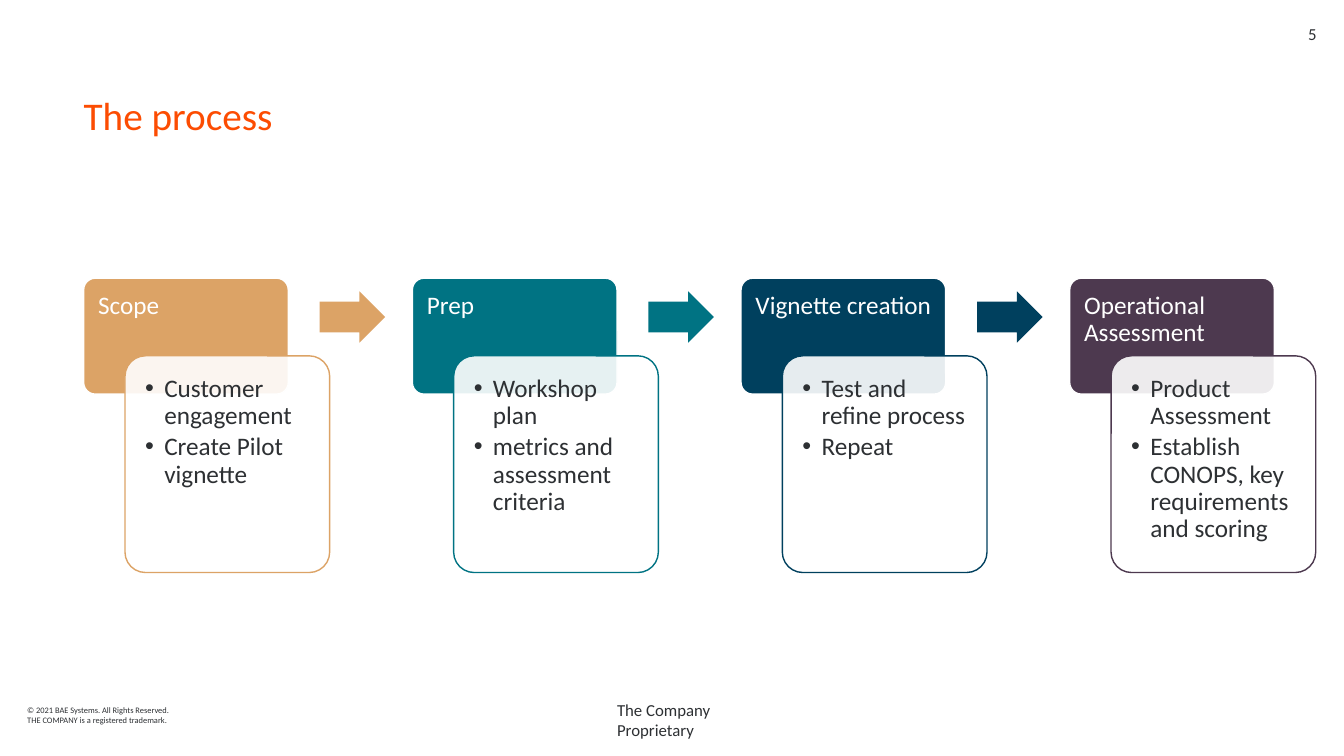
import lxml.etree
import pptx
import pptx.dml.color
import pptx.enum.shapes
import pptx.enum.text
import pptx.oxml.ns
import pptx.util

Inches = pptx.util.Inches
Pt = pptx.util.Pt
Shapes = pptx.enum.shapes.MSO_SHAPE
Anchor = pptx.enum.text.MSO_ANCHOR
Align = pptx.enum.text.PP_ALIGN

INK = "2D3033"
WHITE = "FFFFFF"
STEPS = [
    ("Scope", "DCA366", ["Customer engagement", "Create Pilot vignette"]),
    ("Prep", "007383", ["Workshop plan", "metrics and assessment criteria"]),
    ("Vignette creation", "00405E", ["Test and refine process", "Repeat"]),
    ("Operational Assessment", "4D394F",
     ["Product Assessment", "Establish CONOPS, key requirements and scoring"]),
]
STEP_PITCH = 3.26


def color(hex_string):
    """Turn a hex string into a colour."""
    return pptx.dml.color.RGBColor.from_string(hex_string)


def add_xml(parent, tag, **attributes):
    """Append a DrawingML element to a parent."""
    element = lxml.etree.SubElement(parent, pptx.oxml.ns.qn(tag))
    for name, value in attributes.items():
        element.set(name, value)
    return element


def setup_frame(frame, insets=(0, 0, 0, 0), anchor=Anchor.TOP):
    """Set wrapping, insets and anchor of a text frame."""
    frame.word_wrap = True
    frame.auto_size = pptx.enum.text.MSO_AUTO_SIZE.NONE
    frame.vertical_anchor = anchor
    (frame.margin_left, frame.margin_top,
     frame.margin_right, frame.margin_bottom) = map(Inches, insets)


def write(frame, texts, size, ink=INK, align=Align.LEFT, spacing=None, after=0, bullet=False):
    """Write one paragraph per text."""
    for index, text in enumerate(texts):
        paragraph = frame.paragraphs[0] if index == 0 else frame.add_paragraph()
        paragraph.alignment = align
        paragraph.line_spacing = spacing
        paragraph.space_before = Pt(0)
        paragraph.space_after = Pt(after)
        if bullet:
            properties = paragraph._p.get_or_add_pPr()
            properties.set("marL", str(Inches(0.19)))
            properties.set("indent", str(-Inches(0.19)))
            add_xml(properties, "a:buFont", typeface="Arial")
            add_xml(properties, "a:buChar", char="•")
        run = paragraph.add_run()
        run.text = text
        run.font.name = "Calibri"
        run.font.size = Pt(size)
        run.font.color.rgb = color(ink)


def add_label(slide, box, texts, size, anchor=Anchor.TOP, align=Align.LEFT):
    """Add a plain text box."""
    frame = slide.shapes.add_textbox(*map(Inches, box)).text_frame
    setup_frame(frame, anchor=anchor)
    write(frame, texts, size, align=align)


def add_block(slide, kind, box, adjustments, fill, line=None):
    """Add a filled preset shape."""
    shape = slide.shapes.add_shape(kind, *map(Inches, box))
    shape.shadow.inherit = False
    for index, value in enumerate(adjustments):
        shape.adjustments[index] = value
    shape.fill.solid()
    shape.fill.fore_color.rgb = color(fill)
    if line:
        shape.line.color.rgb = color(line)
        shape.line.width = Pt(1)
    else:
        shape.line.fill.background()
    return shape


def add_title(slide, box, text):
    """Place and write the slide title."""
    title = slide.shapes.title
    title.left, title.top, title.width, title.height = map(Inches, box)
    setup_frame(title.text_frame, anchor=Anchor.BOTTOM)
    write(title.text_frame, [text], 28, "FC4C02", spacing=0.9)


def add_step(slide, left, top, heading, accent, points):
    """Add a heading block with its overlapping card of points."""
    header = add_block(slide, Shapes.ROUNDED_RECTANGLE, (left, top, 2.03, 1.15), [0.1], accent, WHITE)
    setup_frame(header.text_frame, (0.11, 0.11, 0.08, 0.07))
    write(header.text_frame, [heading], 18, WHITE, spacing=0.9, after=6.3)

    card = add_block(slide, Shapes.ROUNDED_RECTANGLE, (left + 0.41, top + 0.77, 2.03, 2.15),
                     [0.1], WHITE, accent)
    fill_color = card.fill._xPr.find(".//" + pptx.oxml.ns.qn("a:srgbClr"))
    add_xml(fill_color, "a:alpha", val="90000")
    setup_frame(card.text_frame, (0.14, 0.14, 0.14, 0.14))
    write(card.text_frame, points, 18, spacing=0.9, after=2.7, bullet=True)


def add_process(slide, left, top):
    """Lay out the steps at an equal pitch with arrows between them."""
    for index, (heading, accent, points) in enumerate(STEPS):
        step_left = left + index * STEP_PITCH
        add_step(slide, step_left, top, heading, accent, points)
        if index < len(STEPS) - 1:
            add_block(slide, Shapes.RIGHT_ARROW, (step_left + 2.34, top + 0.13, 0.65, 0.51),
                      [0.6, 0.5], accent)


def add_footer(slide, left, top):
    """Add the copyright notice and the marking."""
    add_label(slide, (left, top, 1.79, 0.32),
              ["© 2021 BAE Systems. All Rights Reserved.",
               "THE COMPANY is a registered trademark."], 6, Anchor.MIDDLE)
    add_label(slide, (left + 5.85, top + 0.01, 1.2, 0.4), ["The Company Proprietary"], 12)


def main():
    """Build and save the presentation."""
    presentation = pptx.Presentation()
    presentation.slide_width = Inches(13.33)
    presentation.slide_height = Inches(7.5)
    slide = presentation.slides.add_slide(presentation.slide_layouts[5])
    add_title(slide, (0.83, 0.48, 12.23, 0.9), "The process")
    add_label(slide, (12.66, 0.27, 0.4, 0.14), ["5"], 12, Anchor.MIDDLE, Align.RIGHT)
    add_process(slide, 0.83, 2.76)
    add_footer(slide, 0.27, 6.93)
    presentation.save("out.pptx")


if __name__ == "__main__":
    main()
